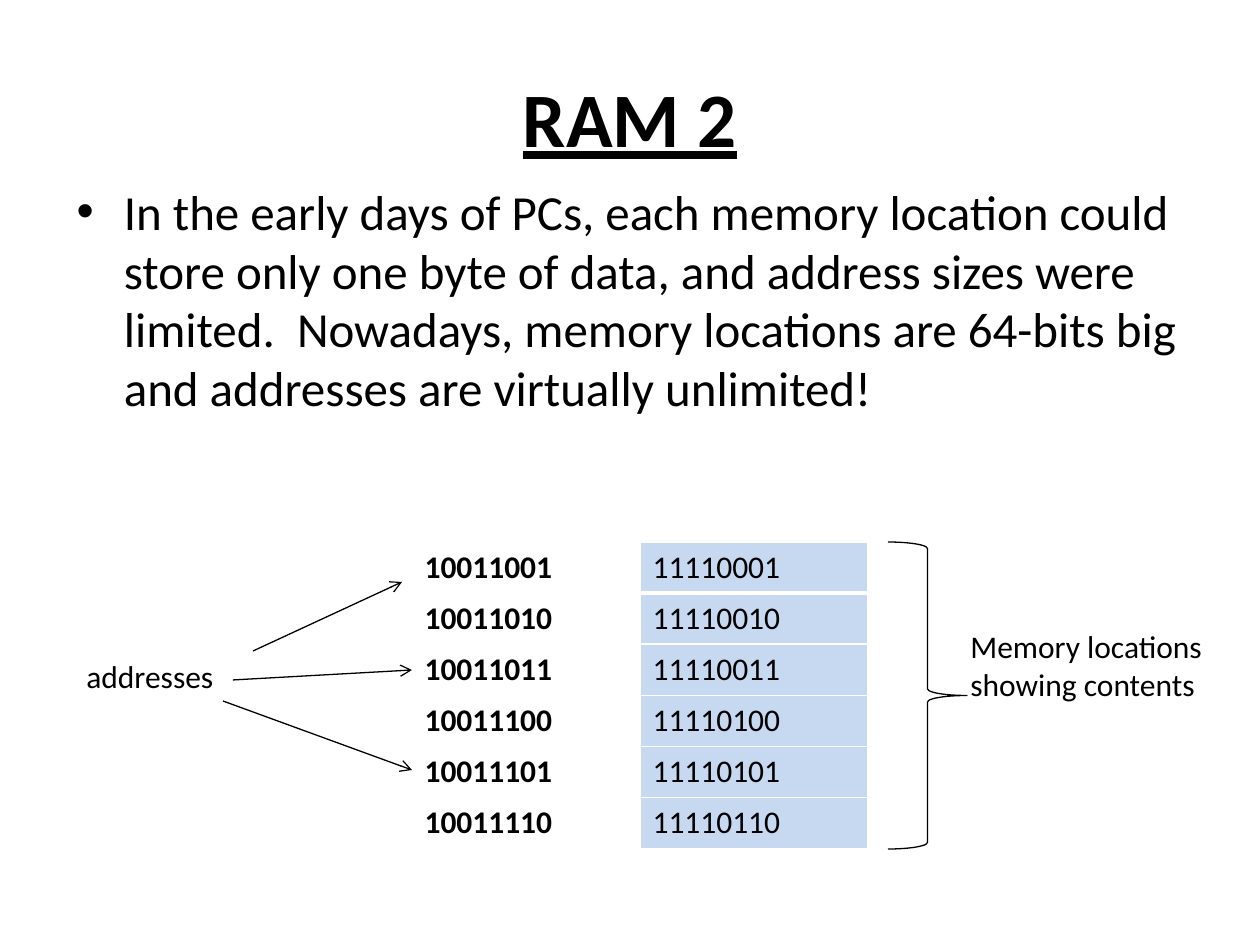
from pptx import Presentation
from pptx.dml.color import RGBColor as Rgb
from pptx.enum.shapes import MSO_CONNECTOR as Link, MSO_SHAPE as Form
from pptx.enum.text import MSO_ANCHOR as Anchor, MSO_AUTO_SIZE as Fit, PP_ALIGN as Align
from pptx.oxml.ns import qn
from pptx.util import Emu, Pt
from lxml.etree import SubElement as Sub

TITLE = "RAM 2"
BODY = ("In the early days of PCs, each memory location could store only one byte "
        "of data, and address sizes were  limited.  Nowadays, memory locations are "
        "64-bits big and addresses are virtually unlimited!")
ROWS = [
    ("10011001", "11110001"),
    ("10011010", "11110010"),
    ("10011011", "11110011"),
    ("10011100", "11110100"),
    ("10011101", "11110101"),
    ("10011110", "11110110"),
]
LABELS = [
    ("addresses", (74, 651, 154, 50), False),
    ("Memory locations showing contents", (958, 621, 258, 89), True),
]
ARROWS = [
    ((253, 651), (402, 582)),
    ((233, 680), (412, 670)),
    ((223, 701), (412, 770)),
]
GRID = (412, 542, 456, 306)
BRACE = (888, 542, 79, 307)
THEME = {
    "font": "Calibri", "ink": "000000", "cell": "C6D9F1", "edge": "FFFFFF",
    "title": 44, "body": 28, "label": 18, "line": 0.75, "thin": 1, "thick": 3,
}


def px(n):
    return Emu(round(n * 914400 / 126))


def place(shape, box):
    shape.left, shape.top, shape.width, shape.height = map(px, box)


def write(frame, text, size, bold=False, under=False):
    para = frame.paragraphs[0]
    run = para.add_run()
    run.text = text
    font = run.font
    font.name, font.size = THEME["font"], Pt(THEME[size])
    font.bold, font.underline = bold, under
    font.color.rgb = Rgb.from_string(THEME["ink"])
    return para


def ink(shape):
    shape.line.color.rgb = Rgb.from_string(THEME["ink"])
    shape.line.width = Pt(THEME["line"])


def edge(cell, sides):
    props = cell._tc.get_or_add_tcPr()
    for side, width in sides.items():
        line = Sub(props, qn(f"a:ln{side}"), w=str(Pt(THEME[width])))
        fill = Sub(line, qn("a:solidFill"))
        Sub(fill, qn("a:srgbClr"), val=THEME["edge"])


def heads(slide):
    title, body = slide.shapes.title, slide.placeholders[1]
    place(title, (63, 38, 1134, 157))
    title.text_frame.vertical_anchor = Anchor.MIDDLE
    write(title.text_frame, TITLE, "title", True, True).alignment = Align.CENTER
    place(body, (64, 175, 1134, 338))
    body.text_frame.auto_size = Fit.NONE
    write(body.text_frame, BODY, "body")


def grid(slide):
    table = slide.shapes.add_table(len(ROWS), len(ROWS[0]), *map(px, GRID)).table
    table.first_row = table.horz_banding = False
    for r, row in enumerate(ROWS):
        for c, text in enumerate(row):
            cell = table.cell(r, c)
            write(cell.text_frame, text, "label", bold=c == 0)
            edge(cell, {"L": "thin", "R": "thin",
                        "T": "thick" if r == 1 else "thin",
                        "B": "thick" if r == 0 else "thin"})
            if c:
                cell.fill.solid()
                cell.fill.fore_color.rgb = Rgb.from_string(THEME["cell"])
            else:
                cell.fill.background()


def notes(slide):
    for text, box, wrap in LABELS:
        frame = slide.shapes.add_textbox(*map(px, box)).text_frame
        frame.word_wrap = wrap
        frame.auto_size = Fit.SHAPE_TO_FIT_TEXT
        write(frame, text, "label")
    brace = slide.shapes.add_shape(Form.RIGHT_BRACE, *map(px, BRACE))
    brace.shadow.inherit = False
    brace.fill.background()
    ink(brace)
    for start, end in ARROWS:
        arrow = slide.shapes.add_connector(Link.STRAIGHT, *map(px, start + end))
        ink(arrow)
        Sub(arrow.line._get_or_add_ln(), qn("a:tailEnd"), type="arrow")
        Sub(arrow._element.spPr, qn("a:effectLst"))


def main():
    deck = Presentation()
    deck.slide_width, deck.slide_height = px(1260), px(945)
    slide = deck.slides.add_slide(deck.slide_layouts[1])
    heads(slide)
    grid(slide)
    notes(slide)
    deck.save("out.pptx")


if __name__ == "__main__":
    main()
